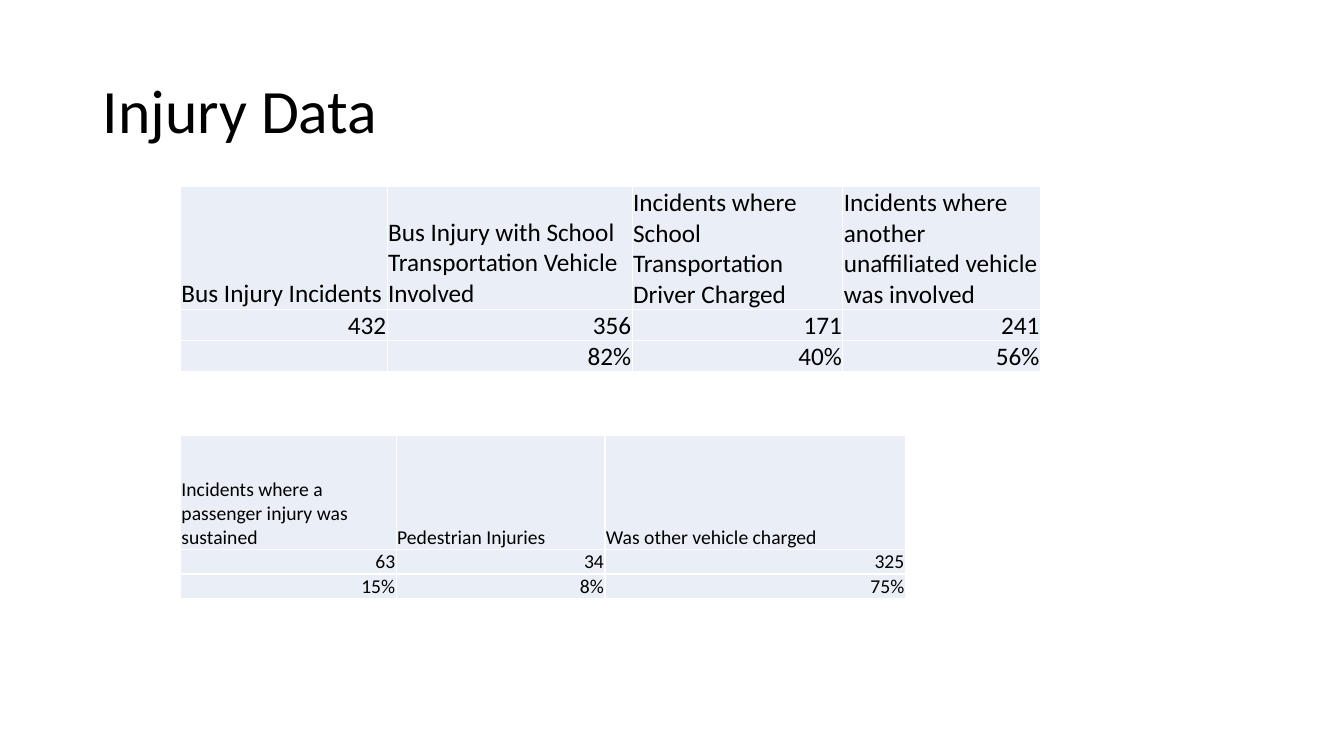
import dataclasses

import pptx
import pptx.dml.color
import pptx.enum.text
import pptx.oxml
import pptx.oxml.ns
import pptx.util

EMU_PER_PX = 9144
SLIDE_SIZE = (1333, 750)
ALIGN = pptx.enum.text.PP_ALIGN
ANCHOR = pptx.enum.text.MSO_ANCHOR


@dataclasses.dataclass(frozen=True)
class Theme:
    font: str = "Calibri"
    ink: str = "000000"
    cell: str = "EAEFF7"
    border: str = "FFFFFF"
    border_pt: int = 1
    title_pt: int = 44
    incidents_pt: int = 18
    outcomes_pt: int = 14


THEME = Theme()

INCIDENTS = [
    [
        "Bus Injury Incidents",
        "Bus Injury with School Transportation Vehicle Involved",
        "Incidents where School Transportation Driver Charged",
        "Incidents where another unaffiliated vehicle was involved",
    ],
    ["432", "356", "171", "241"],
    ["", "82%", "40%", "56%"],
]
OUTCOMES = [
    [
        "Incidents where a passenger injury was sustained",
        "Pedestrian Injuries",
        "Was other vehicle charged",
    ],
    ["63", "34", "325"],
    ["15%", "8%", "75%"],
]


def px(length):
    return pptx.util.Emu(length * EMU_PER_PX)


def rgb(colour):
    return pptx.dml.color.RGBColor.from_string(colour)


def apply_format(target, values):
    for attribute, value in values.items():
        setattr(target, attribute, value)


def write(paragraph, words, size):
    run = paragraph.add_run()
    run.text = words
    apply_format(run.font, {"name": THEME.font, "size": pptx.util.Pt(size)})
    run.font.color.rgb = rgb(THEME.ink)


def add_borders(cell):
    properties = cell._tc.get_or_add_tcPr()
    width = pptx.util.Pt(THEME.border_pt)
    for side in ("lnL", "lnR", "lnT", "lnB"):
        properties.append(pptx.oxml.parse_xml(
            f'<a:{side} {pptx.oxml.ns.nsdecls("a")} w="{width}"><a:solidFill>'
            f'<a:srgbClr val="{THEME.border}"/></a:solidFill></a:{side}>'
        ))


def add_title(slide, box, words):
    heading = slide.shapes.add_textbox(*map(px, box)).text_frame
    apply_format(heading, {"word_wrap": True, "vertical_anchor": ANCHOR.MIDDLE})
    heading.paragraphs[0].line_spacing = 0.9
    write(heading.paragraphs[0], words, THEME.title_pt)


def add_figures(slide, origin, widths, heights, figures, size):
    box = (*origin, sum(widths), sum(heights))
    grid = slide.shapes.add_table(len(heights), len(widths), *map(px, box)).table
    apply_format(grid, {"first_row": False, "horz_banding": False})
    for column, width in zip(grid.columns, widths):
        column.width = px(width)
    for row, height in zip(grid.rows, heights):
        row.height = px(height)
    cell_format = {
        "margin_left": px(1),
        "margin_right": px(1),
        "margin_top": px(1),
        "margin_bottom": px(0),
        "vertical_anchor": ANCHOR.BOTTOM,
    }
    for row_index, entries in enumerate(figures):
        for column_index, words in enumerate(entries):
            cell = grid.cell(row_index, column_index)
            apply_format(cell, cell_format)
            add_borders(cell)
            cell.fill.solid()
            cell.fill.fore_color.rgb = rgb(THEME.cell)
            paragraph = cell.text_frame.paragraphs[0]
            paragraph.alignment = ALIGN.RIGHT if row_index else ALIGN.LEFT
            if words:
                write(paragraph, words, size)


def build_injury_slide(presentation):
    slide = presentation.slides.add_slide(presentation.slide_layouts[6])
    add_title(slide, (92, 40, 1150, 145), "Injury Data")
    add_figures(slide, (179, 185), (205, 243, 209, 196), (122, 31, 31),
                INCIDENTS, THEME.incidents_pt)
    add_figures(slide, (179, 432), (214, 207, 298), (113, 24, 24),
                OUTCOMES, THEME.outcomes_pt)


def main():
    presentation = pptx.Presentation()
    presentation.slide_width, presentation.slide_height = map(px, SLIDE_SIZE)
    build_injury_slide(presentation)
    presentation.save("out.pptx")


if __name__ == "__main__":
    main()
